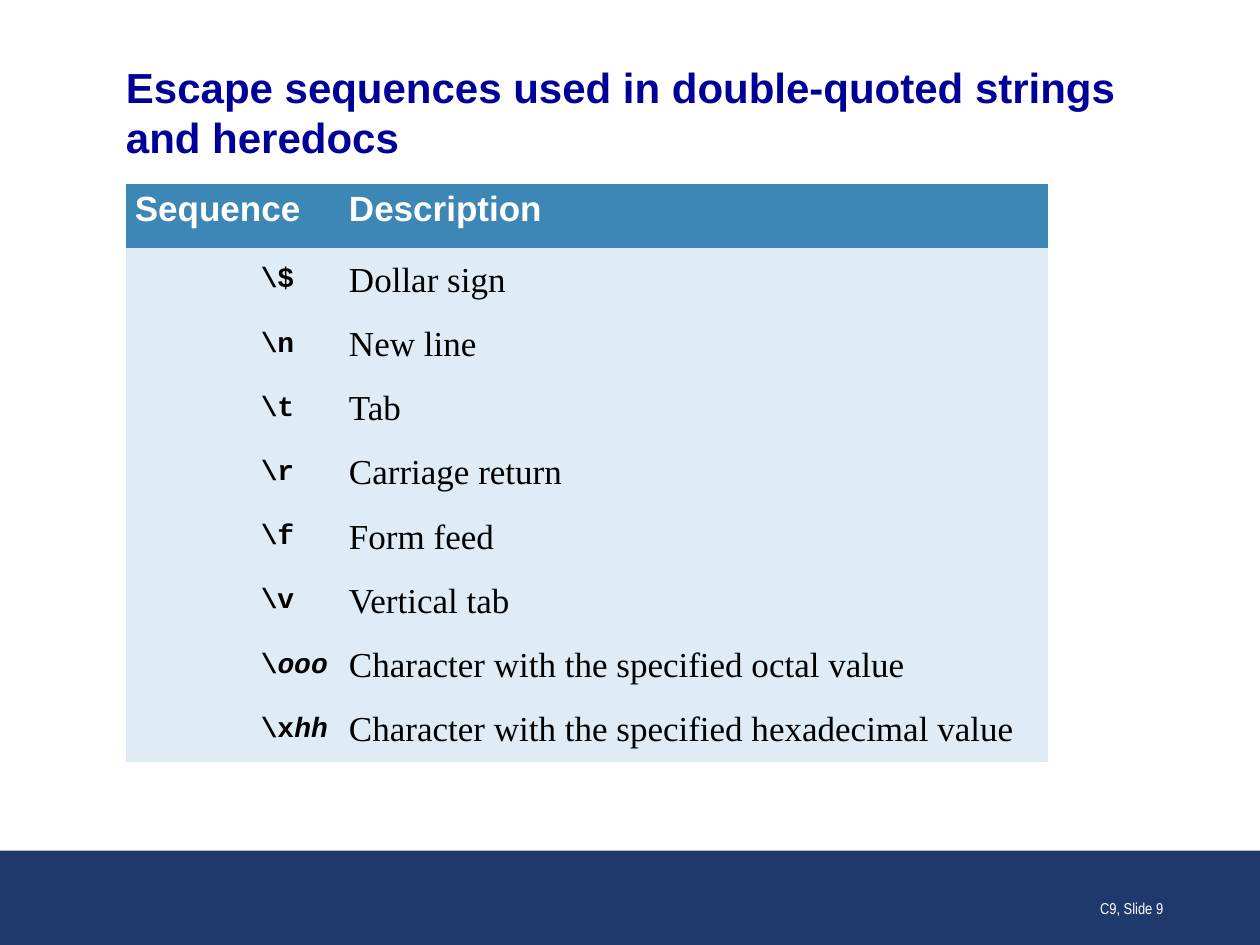
"""Build a slide that lists the escape sequences of double-quoted strings."""
from lxml.etree import SubElement
from pptx import Presentation
from pptx.dml.color import RGBColor
from pptx.enum.shapes import MSO_SHAPE
from pptx.enum.text import MSO_ANCHOR, PP_ALIGN
from pptx.oxml.ns import qn
from pptx.util import Inches, Pt

HUES = {
    "title": "000099",
    "head": "3D87B7",
    "body": "DFECF5",
    "band": "20396D",
    "ink": "000000",
    "white": "FFFFFF",
}
ROWS = [
    ("\\$", "", "Dollar sign"),
    ("\\n", "", "New line"),
    ("\\t", "", "Tab"),
    ("\\r", "", "Carriage return"),
    ("\\f", "", "Form feed"),
    ("\\v", "", "Vertical tab"),
    ("\\", "ooo", "Character with the specified octal value"),
    ("\\x", "hh", "Character with the specified hexadecimal value"),
]
NO_GRID = "{2D5ABB26-0587-4C30-8999-92F81FD0307C}"


def hue(name):
    return RGBColor.from_string(HUES[name])


def style(para, face, size, ink, bold=False):
    font = para.font
    font.name, font.size, font.bold = face, Pt(size), bold
    font.color.rgb = hue(ink)


deck = Presentation()
deck.slide_width, deck.slide_height = Inches(10), Inches(7.5)
wide, high = deck.slide_width, deck.slide_height
slide = deck.slides.add_slide(deck.slide_layouts[6])
shapes = slide.shapes

band = shapes.add_shape(MSO_SHAPE.RECTANGLE, 0, int(high * 0.9), wide, int(high * 0.1))
band.shadow.inherit = False
band.fill.solid()
band.fill.fore_color.rgb = hue("band")
band.line.fill.background()

left = int(wide * 0.1)
frame = shapes.add_textbox(left, Inches(0.48), int(wide * 0.8), Inches(0.81)).text_frame
frame.word_wrap = True
frame.vertical_anchor = MSO_ANCHOR.MIDDLE
frame.margin_left = frame.margin_right = frame.margin_top = frame.margin_bottom = 0
para = frame.paragraphs[0]
para.text = "Escape sequences used in double-quoted strings and heredocs"
style(para, "Arial", 24, "title", True)

cols = [Inches(1.7), Inches(5.62)]
row_high = Inches(0.51)
count = len(ROWS) + 1
table = shapes.add_table(count, 2, left, Inches(1.46), sum(cols), row_high * count).table
table._tbl.tblPr.find(qn("a:tableStyleId")).text = NO_GRID
table.first_row = table.horz_banding = False
for col, width in zip(table.columns, cols):
    col.width = width
for row in table.rows:
    row.height = row_high
for cell in table.iter_cells():
    cell.margin_left = cell.margin_right = Inches(0.07)
    cell.margin_top = cell.margin_bottom = Inches(0.05)
    cell.vertical_anchor = MSO_ANCHOR.MIDDLE
    cell.fill.solid()
    cell.fill.fore_color.rgb = hue("body")

for cell, label in zip(table.rows[0].cells, ("Sequence", "Description")):
    cell.vertical_anchor = MSO_ANCHOR.TOP
    cell.fill.fore_color.rgb = hue("head")
    para = cell.text_frame.paragraphs[0]
    para.text = label
    style(para, "Arial", 20, "white", True)

for place, (code, digits, label) in enumerate(ROWS, 1):
    para = table.cell(place, 0).text_frame.paragraphs[0]
    stops = SubElement(para._p.get_or_add_pPr(), qn("a:tabLst"))
    SubElement(stops, qn("a:tab"), pos=str(Inches(1)), algn="l")
    para.add_run().text = "\t" + code
    if digits:
        run = para.add_run()
        run.text = digits
        run.font.italic = True
    style(para, "Courier New", 16, "ink", True)
    para = table.cell(place, 1).text_frame.paragraphs[0]
    para.text = label
    style(para, "Times New Roman", 20, "ink")

frame = shapes.add_textbox(Inches(7.25), Inches(6.83), Inches(2.08), Inches(0.5)).text_frame
frame.word_wrap = True
frame.vertical_anchor = MSO_ANCHOR.BOTTOM
para = frame.paragraphs[0]
para.text = "C9, Slide 9"
para.alignment = PP_ALIGN.RIGHT
style(para, "Arial Narrow", 9, "white")

deck.save("out.pptx")
